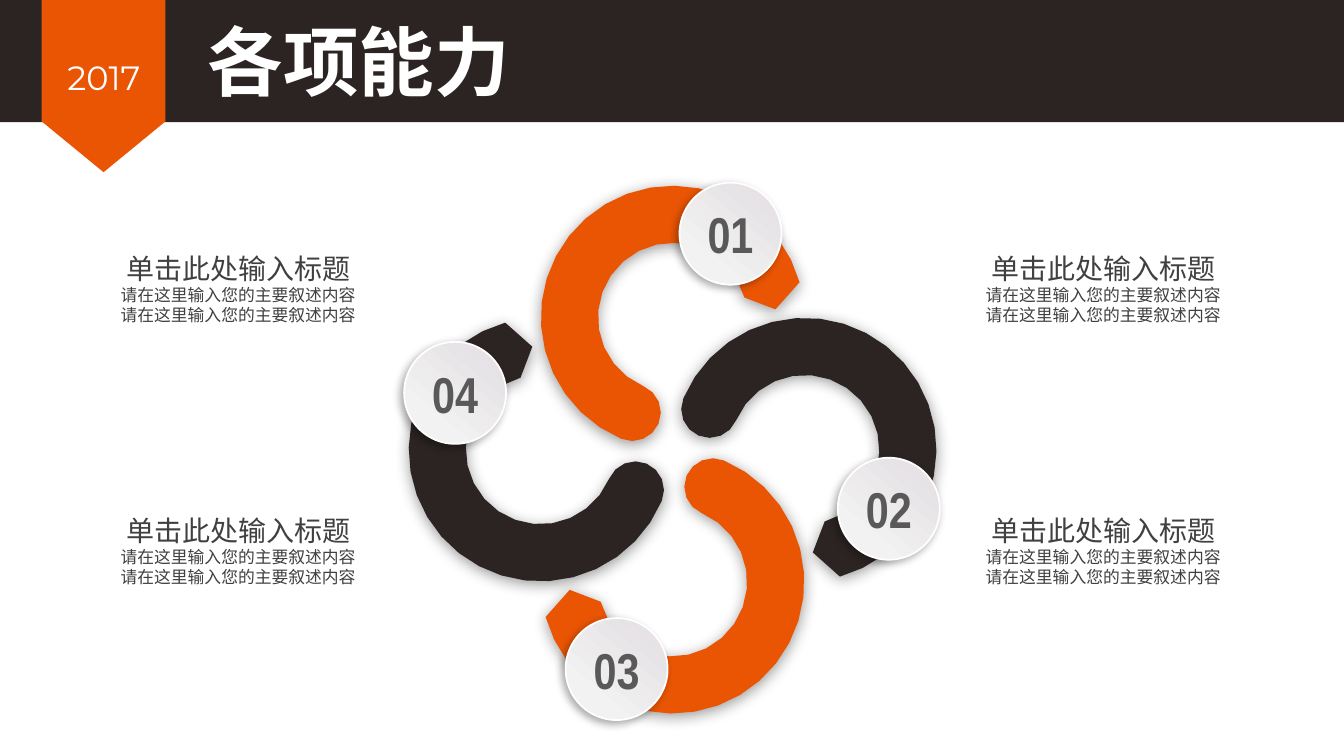
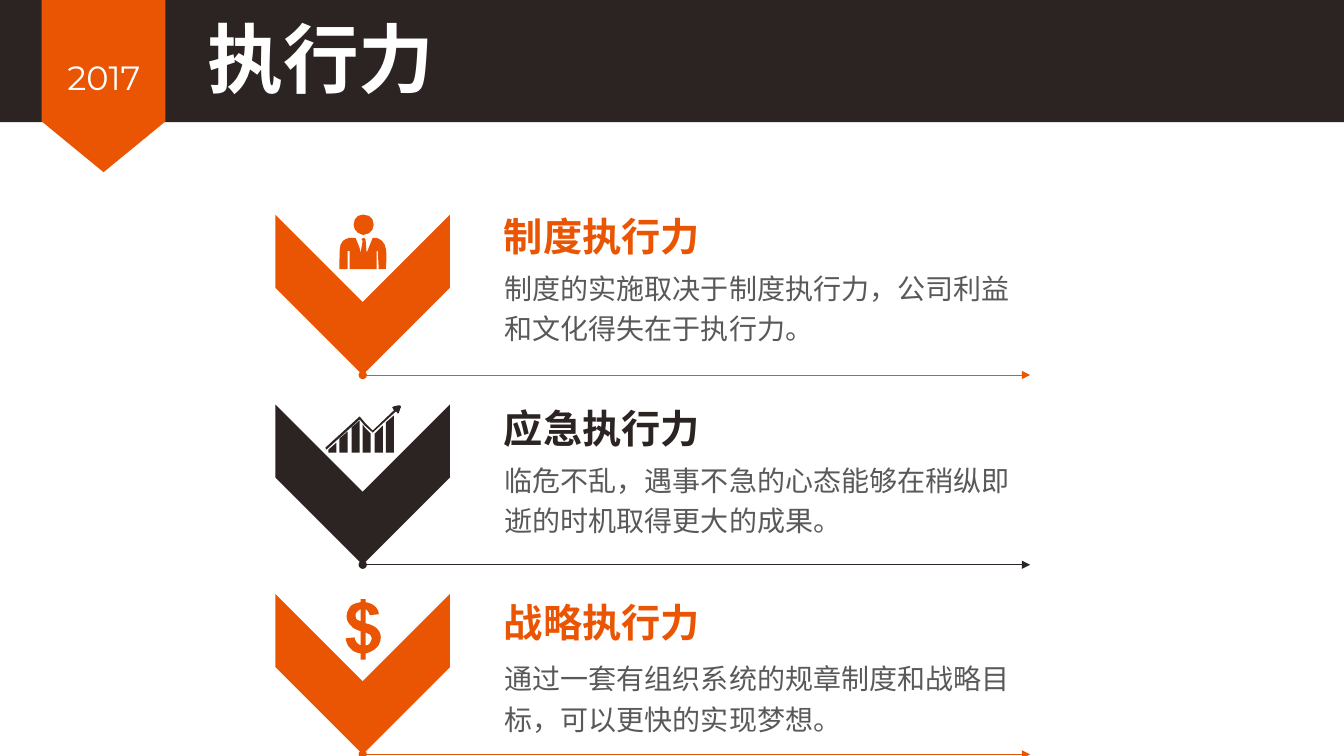
"""Build two slides: a four-part pinwheel of abilities and a list of execution skills."""
from dataclasses import dataclass
from math import cos, radians, sin

from lxml.etree import SubElement
from pptx import Presentation
from pptx.dml.color import RGBColor
from pptx.enum.shapes import MSO_CONNECTOR as LINE, MSO_SHAPE as SHAPE
from pptx.enum.text import MSO_ANCHOR as ANCHOR, PP_ALIGN as ALIGN
from pptx.oxml.ns import qn
from pptx.util import Cm, Pt


@dataclass(frozen=True)
class Theme:
    orange: str = "EA5503"
    dark: str = "2C2422"
    white: str = "FFFFFF"
    grey: str = "595959"
    caption: str = "404040"
    disc_from: str = "E2DDE1"
    disc_to: str = "F2F2F2"
    cjk: str = "Noto Sans CJK SC"
    year_font: str = "Montserrat"
    number_font: str = "Arial Narrow"
    title: int = 54
    number: int = 36
    heading: int = 28
    year: int = 24
    body: int = 20
    small: int = 12


T = Theme()

YEAR = "2017"
ABILITIES = "各项能力"
CAPTION = "单击此处输入标题"
DETAILS = ["请在这里输入您的主要叙述内容"] * 2
CAPTION_LEFTS = (2.79, 24.59)
CAPTION_TOPS = (6.2, 12.8)
PARTS = [
    ("01", T.orange, (18.41, 5.89)),
    ("02", T.dark, (22.4, 12.82)),
    ("03", T.orange, (15.54, 16.86)),
    ("04", T.dark, (11.47, 9.9)),
]

PERSON = [
    [(1, 0), (7, 0, 11, 4, 11, 10), (11, 15, 7, 20, 1, 20), (0, 20),
     (-5, 19, -9, 15, -9, 10), (-9, 4, -5, 0, 0, 0)],
    [(1, 23), (2, 23, 3, 24, 3, 25), (3, 26), (4, 38), (1, 45), (6, 33), (10, 23),
     (14, 23), (16, 24, 20, 25, 22, 30), (24, 32, 24, 45, 23, 54), (16, 54), (15, 36),
     (14, 36), (14, 54), (-13, 54), (-13, 36), (-15, 36), (-15, 54), (-23, 54),
     (-23, 45, -23, 32, -22, 30), (-20, 25, -17, 24, -13, 23), (-7, 23), (-3, 33),
     (-2, 38), (0, 26), (-1, 25), (-1, 24, 0, 23, 1, 23)],
]
GROWTH = [
    [(-26, 38), (-26, 48), (-34, 48), (-34, 45)],
    [(-15, 27), (-15, 48), (-23, 48), (-23, 34)],
    [(-3, 16), (-3, 48), (-11, 48), (-11, 23)],
    [(0, 20), (2, 23), (8, 29), (8, 48), (0, 48)],
    [(20, 21), (20, 48), (12, 48), (12, 29)],
    [(31, 11), (31, 48), (23, 48), (23, 18)],
    [(36, 1), (37, 1, 38, 1, 38, 3), (37, 4, 37, 6, 36, 8), (36, 9, 35, 10, 34, 8),
     (33, 7), (10, 28), (2, 21), (-3, 15), (-36, 45), (-37, 43), (-3, 12), (2, 18),
     (10, 26), (31, 6), (30, 4), (29, 3, 29, 3, 31, 2), (32, 2, 34, 1, 36, 1)],
]
DOLLAR = [
    [(-2, 51), (-2, 37), (-7, 35, -10, 34, -12, 31), (-15, 28, -16, 25, -16, 22),
     (-16, 18, -14, 15, -12, 12), (-10, 10, -7, 9, -2, 8), (-2, 5), (3, 5), (3, 8),
     (7, 9, 10, 10, 12, 12), (14, 14, 16, 16, 16, 20), (7, 21), (6, 18, 5, 16, 3, 15),
     (3, 29), (8, 30, 12, 32, 14, 34), (17, 37, 18, 40, 18, 43), (18, 47, 16, 51, 14, 53),
     (11, 56, 7, 58, 3, 59), (3, 65), (-2, 65), (-2, 59), (-7, 58, -10, 57, -12, 54),
     (-15, 52, -16, 48, -17, 44), (-8, 43), (-8, 45, -7, 46, -6, 48),
     (-5, 49, -4, 50, -2, 51)],
    [(-2, 15), (-4, 16, -5, 17, -6, 18), (-7, 19, -7, 20, -7, 21),
     (-7, 22, -7, 24, -6, 25), (-5, 26, -4, 26, -2, 27)],
    [(3, 51), (5, 51, 6, 50, 7, 49), (8, 47, 9, 46, 9, 44), (9, 43, 8, 41, 7, 40),
     (6, 40, 5, 39, 3, 38)],
]
ICON_UNIT = 2.54 / 100

EXECUTION = "执行力"
SKILLS = [
    ("制度执行力", "制度的实施取决于制度执行力，公司利益和文化得失在于执行力。",
     T.orange, PERSON, 5.36, 6.54),
    ("应急执行力", "临危不乱，遇事不急的心态能够在稍纵即逝的时机取得更大的成果。",
     T.dark, GROWTH, 10.19, 11.38),
    ("战略执行力", "通过一套有组织系统的规章制度和战略目标，可以更快的实现梦想。",
     T.orange, DOLLAR, 15.07, 16.38),
]


def rgb(color):
    return RGBColor.from_string(color)


def paint(sp, color):
    sp.shadow.inherit = False
    sp.fill.solid()
    sp.fill.fore_color.rgb = rgb(color)
    sp.line.fill.background()
    return sp


def cast_shadow(sp, alpha, blur, dist, angle):
    sp.shadow.inherit = False
    effects = sp._element.spPr.find(qn("a:effectLst"))
    outer = SubElement(effects, qn("a:outerShdw"), blurRad=str(Pt(blur)), dist=str(Pt(dist)),
                       dir=str(angle * 60000), algn="ctr", rotWithShape="0")
    color = SubElement(outer, qn("a:srgbClr"), val="000000")
    SubElement(color, qn("a:alpha"), val=str(alpha * 1000))


def add_run(p, text, size, color, font=T.cjk, bold=False):
    r = p.add_run()
    r.text = text
    r.font.size, r.font.bold, r.font.name = Pt(size), bold, font
    r.font.color.rgb = rgb(color)
    SubElement(r.font._element, qn("a:ea"), typeface=font)


def set_margins(tf, x, y):
    tf.margin_left = tf.margin_right = Cm(x)
    tf.margin_top = tf.margin_bottom = Cm(y)


def add_text(slide, box, lines, color, font=T.cjk, bold=False, align=ALIGN.LEFT,
             margins=(0.25, 0.13), wrap=True, spacing=None, indent=0):
    tf = slide.shapes.add_textbox(*map(Cm, box)).text_frame
    tf.word_wrap = wrap
    set_margins(tf, *margins)
    for i, (text, size) in enumerate(lines):
        p = tf.add_paragraph() if i else tf.paragraphs[0]
        p.alignment = align
        if spacing:
            p.line_spacing = spacing
        if indent and i == 0:
            p._p.get_or_add_pPr().set("indent", str(Cm(indent)))
        add_run(p, text, size, color, font, bold)


def add_outline(slide, contours, color):
    points = [[(Cm(x), Cm(y)) for x, y in contour] for contour in contours]
    builder = slide.shapes.build_freeform(*points[0][0])
    for i, (start, *rest) in enumerate(points):
        if i:
            builder.move_to(*start)
        builder.add_line_segments(rest, close=True)
    return paint(builder.convert_to_shape(), color)


def flatten(contour, steps=3):
    points = [contour[0]]
    for segment in contour[1:]:
        if len(segment) == 2:
            points.append(segment)
            continue
        (x0, y0), (x1, y1, x2, y2, x3, y3) = points[-1], segment
        for k in range(1, steps + 1):
            t = k / steps
            u = 1 - t
            a, b, c, d = u ** 3, 3 * u * u * t, 3 * u * t * t, t ** 3
            points.append((a * x0 + b * x1 + c * x2 + d * x3,
                           a * y0 + b * y1 + c * y2 + d * y3))
    return points


def polar(centre, radius, angle):
    return (centre[0] + radius * cos(radians(angle)),
            centre[1] + radius * sin(radians(angle)))


def arc(centre, radius, start, end, steps):
    return [polar(centre, radius, start + (end - start) * k / steps)
            for k in range(steps + 1)]


def add_header_slide(prs, title, title_top):
    slide = prs.slides.add_slide(prs.slide_layouts[6])
    band = slide.shapes.add_shape(SHAPE.RECTANGLE, 0, 0, prs.slide_width, Cm(3.08))
    paint(band, T.dark)
    ribbon = slide.shapes.add_shape(SHAPE.PENTAGON, Cm(0.44), Cm(0.61), Cm(4.34), Cm(3.12))
    ribbon.rotation = 90
    ribbon.adjustments[0] = 0.41
    paint(ribbon, T.orange)
    add_text(slide, (1.22, 1.3, 2.8, 1.27), [(YEAR, T.year)], T.white, T.year_font,
             align=ALIGN.CENTER, wrap=False)
    add_text(slide, (5.04, title_top, 11.76, 2.49), [(title, T.title)], T.white,
             bold=True, margins=(0.19, 0.1))
    return slide


def add_swirl(slide, centre, turn, color):
    outer, inner = 3.32, 1.88
    middle, cap = (outer + inner) / 2, (outer - inner) / 2
    tail, neck, tip = (angle + turn for angle in (113, 344.5, 355.5))
    contour = (arc(centre, outer, tail, neck, 22) + [polar(centre, middle, tip)]
               + arc(centre, inner, neck, tail, 16)
               + arc(polar(centre, middle, tail), cap, tail - 180, tail, 8)[1:-1])
    cast_shadow(add_outline(slide, [contour], color), 40, 11, 2, 90)


def add_disc(slide, centre, number):
    size = 2.57
    left, top = (c - size / 2 for c in centre)
    sp = slide.shapes.add_shape(SHAPE.OVAL, Cm(left), Cm(top), Cm(size), Cm(size))
    sp.fill.gradient()
    sp.fill.gradient_angle = 230
    for stop, color, position in zip(sp.fill.gradient_stops, (T.disc_from, T.disc_to), (0, 0.76)):
        stop.color.rgb = rgb(color)
        stop.position = position
    sp.line.color.rgb = rgb(T.white)
    sp.line.width = Pt(1.25)
    cast_shadow(sp, 32, 6, 3, 135)
    tf = sp.text_frame
    tf.word_wrap = False
    tf.vertical_anchor = ANCHOR.MIDDLE
    set_margins(tf, 0, 0)
    p = tf.paragraphs[0]
    p.alignment = ALIGN.CENTER
    add_run(p, number, T.number, T.grey, T.number_font, True)


def add_arrow(slide, start, end, color):
    line = slide.shapes.add_connector(LINE.STRAIGHT, *map(Cm, start + end))
    line.line.color.rgb = rgb(color)
    line.line.width = Pt(0.5)
    props = line._element.spPr
    ln = props.find(qn("a:ln"))
    SubElement(ln, qn("a:headEnd"), type="oval")
    SubElement(ln, qn("a:tailEnd"), type="triangle")
    SubElement(props, qn("a:effectLst"))


def build_abilities(prs):
    slide = add_header_slide(prs, ABILITIES, 0.28)
    hub = (16.95, 11.33)
    for i, (_, color, _) in enumerate(PARTS):
        add_swirl(slide, polar(hub, 3.33, 90 * i - 90), 90 * i, color)
    for number, _, centre in PARTS:
        add_disc(slide, centre, number)
    lines = [(CAPTION, T.body)] + [(text, T.small) for text in DETAILS]
    for top in CAPTION_TOPS:
        for left in CAPTION_LEFTS:
            add_text(slide, (left, top, 6.5, 3.5), lines, T.caption, indent=0.14)


def build_execution(prs):
    slide = add_header_slide(prs, EXECUTION, 0.2)
    x, first, pitch, half, arm = 9.14, 5.41, 4.78, 2.2, 1.84
    for i, (heading, body, color, icon, heading_top, body_top) in enumerate(SKILLS):
        y = first + i * pitch
        foot = y + half + arm
        chevron = [(x + half, y + arm), (x, foot), (x - half, y + arm),
                   (x - half, y), (x, y + half), (x + half, y)]
        add_outline(slide, [chevron], color)
        add_outline(slide, [[(x + u * ICON_UNIT, y + v * ICON_UNIT) for u, v in flatten(c)]
                            for c in icon], color)
        add_text(slide, (12.47, body_top, 13.89, 2.31), [(body, T.body)], T.grey, spacing=1.2)
        add_text(slide, (12.45, heading_top, 7.09, 1.19), [(heading, T.heading)], color,
                 bold=True, margins=(0.25, 0))
        add_arrow(slide, (x, foot), (25.96, foot), color)


def main():
    prs = Presentation()
    prs.slide_width, prs.slide_height = Cm(33.87), Cm(19.05)
    build_abilities(prs)
    build_execution(prs)
    prs.save("out.pptx")


if __name__ == "__main__":
    main()
